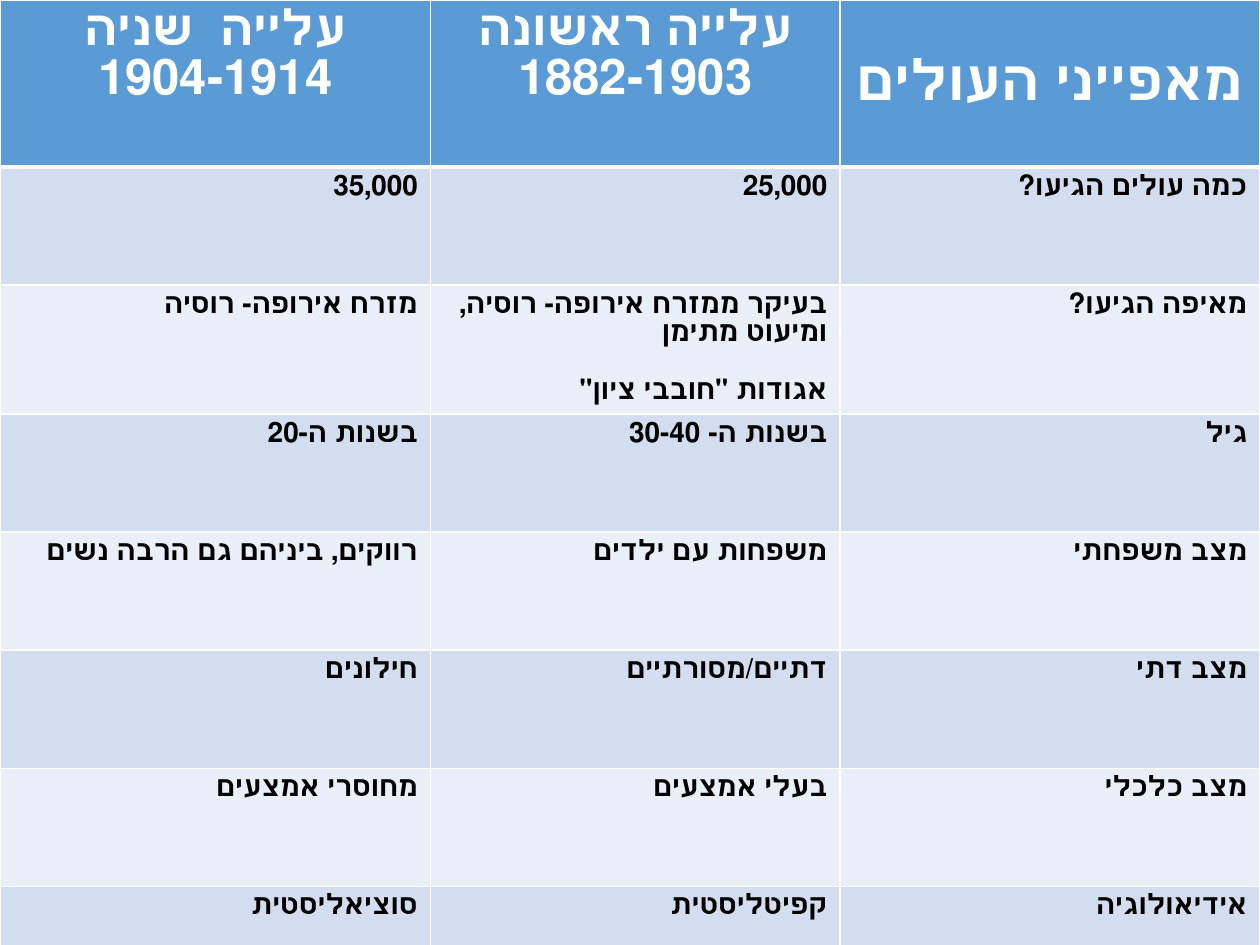
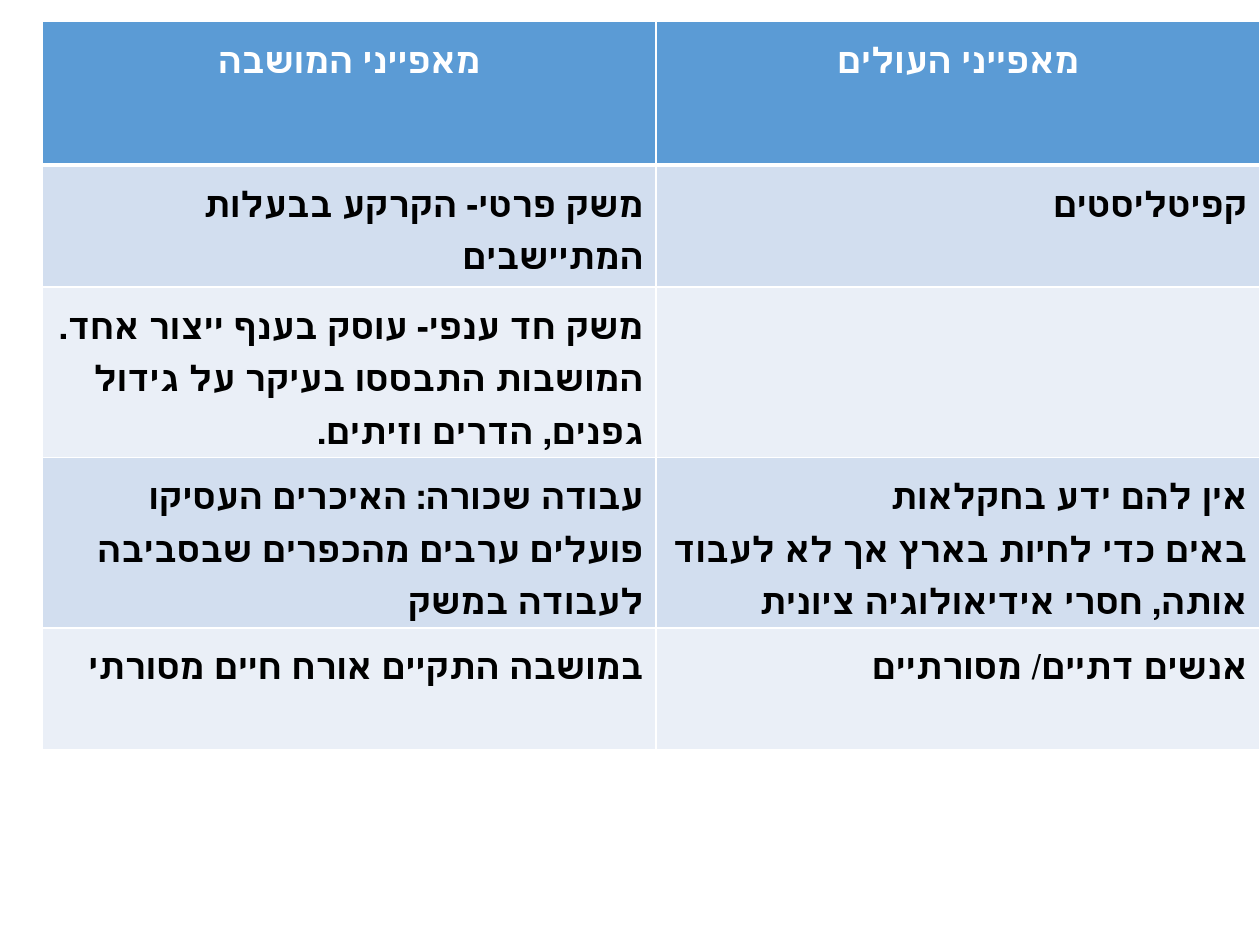
from dataclasses import dataclass

from lxml.etree import SubElement
from pptx import Presentation
from pptx.dml.color import RGBColor
from pptx.enum.text import MSO_ANCHOR, PP_ALIGN
from pptx.oxml.ns import qn
from pptx.util import Pt


@dataclass(frozen=True)
class Theme:
    font: str = "Roboto"
    header_fill: str = "5B9BD5"
    bands: tuple = ("D2DEEF", "EAEFF7")
    header_text: str = "FFFFFF"
    body_text: str = "000000"
    border: str = "FFFFFF"
    thin: float = 1
    thick: float = 3
    body_size: int = 16
    header_size: int = 28
    corner_size: int = 32
    settlement_size: int = 20


THEME = Theme()

# Columns run left to right; a line break starts a new paragraph
ALIYA_ROWS = [
    ["עלייה  שניה\n1904-1914", "עלייה ראשונה\n1882-1903", "מאפייני העולים"],
    ["35,000", "25,000", "כמה עולים הגיעו?"],
    ["מזרח אירופה- רוסיה",
     "בעיקר ממזרח אירופה- רוסיה, ומיעוט מתימן\nאגודות \"חובבי ציון\"",
     "מאיפה הגיעו?"],
    ["בשנות ה-20", "בשנות ה- 30-40", "גיל"],
    ["רווקים, ביניהם גם הרבה נשים", "משפחות עם ילדים", "מצב משפחתי"],
    ["חילונים", "דתיים/מסורתיים", "מצב דתי"],
    ["מחוסרי אמצעים", "בעלי אמצעים", "מצב כלכלי"],
    ["סוציאליסטית", "קפיטליסטית", "אידיאולוגיה"],
]

SETTLEMENT_ROWS = [
    ["מאפייני המושבה", "מאפייני העולים"],
    ["משק פרטי- הקרקע בבעלות המתיישבים", "קפיטליסטים"],
    ["משק חד ענפי- עוסק בענף ייצור אחד. המושבות התבססו בעיקר על "
     "גידול גפנים, הדרים וזיתים.", ""],
    ["עבודה שכורה: האיכרים העסיקו פועלים ערבים מהכפרים שבסביבה לעבודה במשק",
     "אין להם ידע בחקלאות\n"
     "באים כדי לחיות בארץ אך לא לעבוד אותה, חסרי אידיאולוגיה ציונית"],
    ["במושבה התקיים אורח חיים מסורתי", "אנשים דתיים/ מסורתיים"],
]


def set_attrs(target, values):
    for name, value in values.items():
        setattr(target, name, value)


def set_borders(cell, widths):
    """Draw the left, right, top and bottom borders, in that order."""
    tcPr = cell._tc.get_or_add_tcPr()
    for i, (side, width) in enumerate(zip(("lnL", "lnR", "lnT", "lnB"), widths)):
        ln = tcPr.makeelement(qn(f"a:{side}"), {"w": str(Pt(width))})
        fill = SubElement(ln, qn("a:solidFill"))
        SubElement(fill, qn("a:srgbClr"), val=THEME.border)
        tcPr.insert(i, ln)


def write_cell(cell, text, color, size, para_format):
    """Write right-to-left paragraphs in bold."""
    tf = cell.text_frame
    for i, line in enumerate(text.split("\n")):
        p = tf.add_paragraph() if i else tf.paragraphs[0]
        set_attrs(p, para_format)
        p._p.get_or_add_pPr().set("rtl", "1")
        if not line:
            p.font.size = Pt(size)
            continue
        r = p.add_run()
        r.text = line
        set_attrs(r.font, {"name": THEME.font, "size": Pt(size), "bold": True})
        r.font.color.rgb = RGBColor.from_string(color)


def add_banded_table(s, left, top, widths, heights, rows,
                     header_size, body_size, line_spacing=None):
    """Place a table with a header row and two alternating row fills."""
    table = s.shapes.add_table(len(rows), len(widths), Pt(left), Pt(top),
                               Pt(sum(widths)), Pt(sum(heights))).table
    for col, width in zip(table.columns, widths):
        col.width = Pt(width)
    for i, (row, height, texts) in enumerate(zip(table.rows, heights, rows)):
        row.height = Pt(height)
        header = i == 0
        fill = THEME.header_fill if header else THEME.bands[(i - 1) % 2]
        color = THEME.header_text if header else THEME.body_text
        size = header_size if header else body_size
        para_format = {"alignment": PP_ALIGN.CENTER if header else PP_ALIGN.RIGHT,
                       "line_spacing": line_spacing}
        borders = (THEME.thin, THEME.thin,
                   THEME.thick if i == 1 else THEME.thin,
                   THEME.thick if header else THEME.thin)
        for cell, text in zip(row.cells, texts):
            cell.fill.solid()
            cell.fill.fore_color.rgb = RGBColor.from_string(fill)
            set_borders(cell, borders)
            write_cell(cell, text, color, size, para_format)
    return table


def aliya_slide(s):
    """Compare the two waves of immigration."""
    row = 67.5
    table = add_banded_table(s, 0, 0, [246, 234, 240],
                             [95.4, row, 73.7] + [row] * 5, ALIYA_ROWS,
                             THEME.header_size, THEME.body_size)
    # Larger corner heading, centred in its cell
    corner = table.cell(0, 2)
    corner.vertical_anchor = MSO_ANCHOR.MIDDLE
    corner.text_frame.paragraphs[0].runs[0].font.size = Pt(THEME.corner_size)
    # Gap above the associations
    table.cell(2, 1).text_frame.paragraphs[1].space_before = Pt(17)


def settlement_slide(s):
    """Relate the immigrants to the settlement they built."""
    short, tall = 69.7, 97.4
    add_banded_table(s, 24, 12.4, [351, 345], [82, short, tall, tall, short],
                     SETTLEMENT_ROWS, THEME.settlement_size,
                     THEME.settlement_size, line_spacing=1.5)


def main():
    prs = Presentation()
    set_attrs(prs, {"slide_width": Pt(720), "slide_height": Pt(540)})
    blank = prs.slide_layouts[6]
    for build in (aliya_slide, settlement_slide):
        build(prs.slides.add_slide(blank))
    prs.save("out.pptx")


if __name__ == "__main__":
    main()
